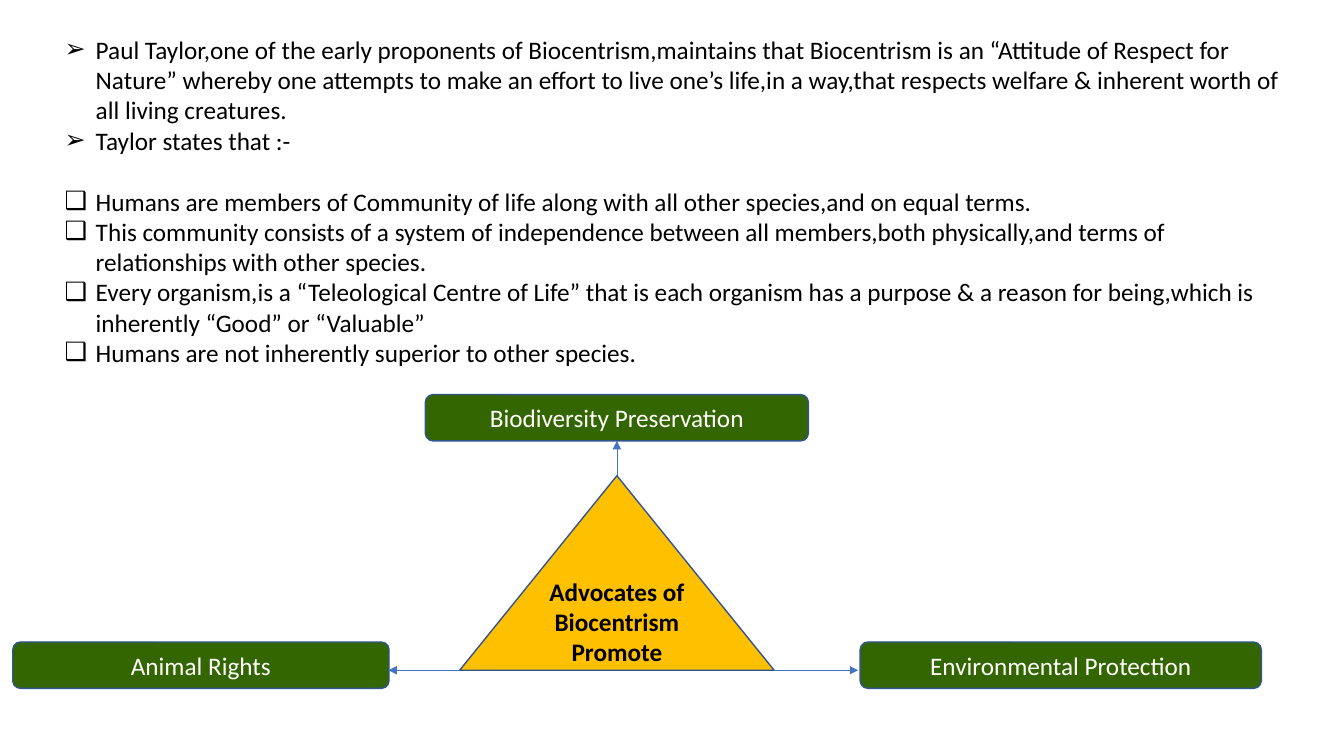
from lxml import etree
from pptx import Presentation
from pptx.dml.color import RGBColor
from pptx.enum.shapes import MSO_CONNECTOR, MSO_SHAPE
from pptx.enum.text import MSO_ANCHOR, MSO_AUTO_SIZE, PP_ALIGN
from pptx.oxml.ns import qn
from pptx.util import Inches, Pt

STRAIGHT = MSO_CONNECTOR.STRAIGHT
ROUNDED, TRIANGLE = MSO_SHAPE.ROUNDED_RECTANGLE, MSO_SHAPE.ISOSCELES_TRIANGLE
TOP, MIDDLE, CENTER = MSO_ANCHOR.TOP, MSO_ANCHOR.MIDDLE, PP_ALIGN.CENTER
FIT_SHAPE = MSO_AUTO_SIZE.SHAPE_TO_FIT_TEXT
TOP_SIDE, BOTTOM_SIDE = 0, 2
TITLE_AND_CONTENT = 1

WIDTH, HEIGHT = Inches(13.33), Inches(7.5)
COLUMNS = ROWS = 100

BLACK, WHITE = "000000", "FFFFFF"
GREEN, GOLD = "336600", "FFC000"
OUTLINE, ARROW = "325491", "4472C4"

INTRODUCTION = [
    "Paul Taylor,one of the early proponents of Biocentrism,maintains that Biocentrism is an “Attitude of "
    "Respect for Nature” whereby one attempts to make an effort to live one’s life,in a way,that respects "
    "welfare & inherent worth of all living creatures.",
    "Taylor states that :-",
]
BELIEFS = [
    "Humans are members of Community of life along with all other species,and on equal terms.",
    "This community consists of a system of independence between all members,both physically,and terms of "
    "relationships with other species.",
    "Every organism,is a “Teleological Centre of Life” that is each organism has a purpose & a reason for "
    "being,which is inherently “Good” or “Valuable”",
    "Humans are not inherently superior to other species.",
]


def color(hex_string):
    return RGBColor.from_string(hex_string)


def across(columns):
    return round(WIDTH * columns / COLUMNS)


def down(rows):
    return round(HEIGHT * rows / ROWS)


class SlideBuilder:
    """Draws on one slide; every length is in grid columns and rows."""

    font_name = "Calibri"
    font_size = Pt(18)
    blank_line = Pt(22)
    indent = Inches(0.31)

    def __init__(self, presentation):
        self.slide = presentation.slides.add_slide(presentation.slide_layouts[TITLE_AND_CONTENT])
        title = self.slide.shapes.title
        title.element.getparent().remove(title.element)

    def style_font(self, font, text_color, bold=False):
        font.name, font.size, font.bold = self.font_name, self.font_size, bold
        font.color.rgb = color(text_color)

    def add_bullet(self, paragraph, character):
        properties = paragraph._p.get_or_add_pPr()
        properties.set("marL", str(self.indent))
        properties.set("indent", str(-self.indent))
        etree.SubElement(properties, qn("a:buFont")).set("typeface", self.font_name)
        etree.SubElement(properties, qn("a:buChar")).set("char", character)

    def bullet_list(self, left, top, width, height, groups):
        """Fills the body placeholder with (bullet, lines) groups, one blank line apart."""
        body = self.slide.placeholders[1]
        body.left, body.top = across(left), down(top)
        body.width, body.height = across(width), down(height)
        text_frame = body.text_frame
        text_frame.text = "\n".join(line for _, lines in groups for line in lines)
        text_frame.word_wrap, text_frame.auto_size = True, FIT_SHAPE
        text_frame.vertical_anchor = TOP
        paragraphs = iter(text_frame.paragraphs)
        for group_number, (character, lines) in enumerate(groups):
            for line_number in range(len(lines)):
                paragraph = next(paragraphs)
                starts_new_group = group_number > 0 and line_number == 0
                self.add_bullet(paragraph, character)
                paragraph.space_before = self.blank_line if starts_new_group else Pt(0)
                self.style_font(paragraph.runs[0].font, BLACK)

    def labelled_shape(self, kind, left, top, width, height, text, fill, text_color, bold=False):
        shape = self.slide.shapes.add_shape(kind, across(left), down(top), across(width), down(height))
        shape.shadow.inherit = False
        shape.fill.solid()
        shape.fill.fore_color.rgb = color(fill)
        shape.line.color.rgb, shape.line.width = color(OUTLINE), Pt(1)
        text_frame = shape.text_frame
        text_frame.text = text
        text_frame.word_wrap, text_frame.vertical_anchor = True, MIDDLE
        paragraph = text_frame.paragraphs[0]
        paragraph.alignment = CENTER
        self.style_font(paragraph.runs[0].font, text_color, bold)
        return shape

    def green_box(self, left, top, width, text):
        return self.labelled_shape(ROUNDED, left, top, width, 6.13, text, GREEN, WHITE)

    def arrow(self, start_column, start_row, end_column, end_row):
        connector = self.slide.shapes.add_connector(
            STRAIGHT, across(start_column), down(start_row), across(end_column), down(end_row))
        connector.line.color.rgb, connector.line.width = color(ARROW), Pt(0.5)
        etree.SubElement(connector.line._get_or_add_ln(), qn("a:tailEnd")).set("type", "triangle")
        etree.SubElement(connector._element.spPr, qn("a:effectLst"))
        return connector


def main():
    presentation = Presentation()
    presentation.slide_width, presentation.slide_height = WIDTH, HEIGHT
    builder = SlideBuilder(presentation)
    builder.bullet_list(4.05, 3.87, 91.9, 45.73, [("➢", INTRODUCTION), ("❑", BELIEFS)])

    left, apex, width, height = 34.2, 62.93, 23.4, 25.73
    middle, right, base = left + width / 2, left + width, apex + height
    triangle = builder.labelled_shape(TRIANGLE, left, apex, width, height,
                                      "Advocates of Biocentrism Promote", GOLD, BLACK, bold=True)
    top_box_width, lower_row = 28.5, 84.93
    biodiversity = builder.green_box(middle - top_box_width / 2, 52.2, top_box_width, "Biodiversity Preservation")
    builder.green_box(0.95, lower_row, 28, "Animal Rights")
    builder.green_box(64, lower_row, 29.85, "Environmental Protection")

    upward = builder.arrow(middle, apex, middle, 58.33)
    upward.begin_connect(triangle, TOP_SIDE)
    upward.end_connect(biodiversity, BOTTOM_SIDE)
    builder.arrow(left, base, 28.9, base)
    builder.arrow(right, base, 63.85, base)
    presentation.save("out.pptx")


if __name__ == "__main__":
    main()
